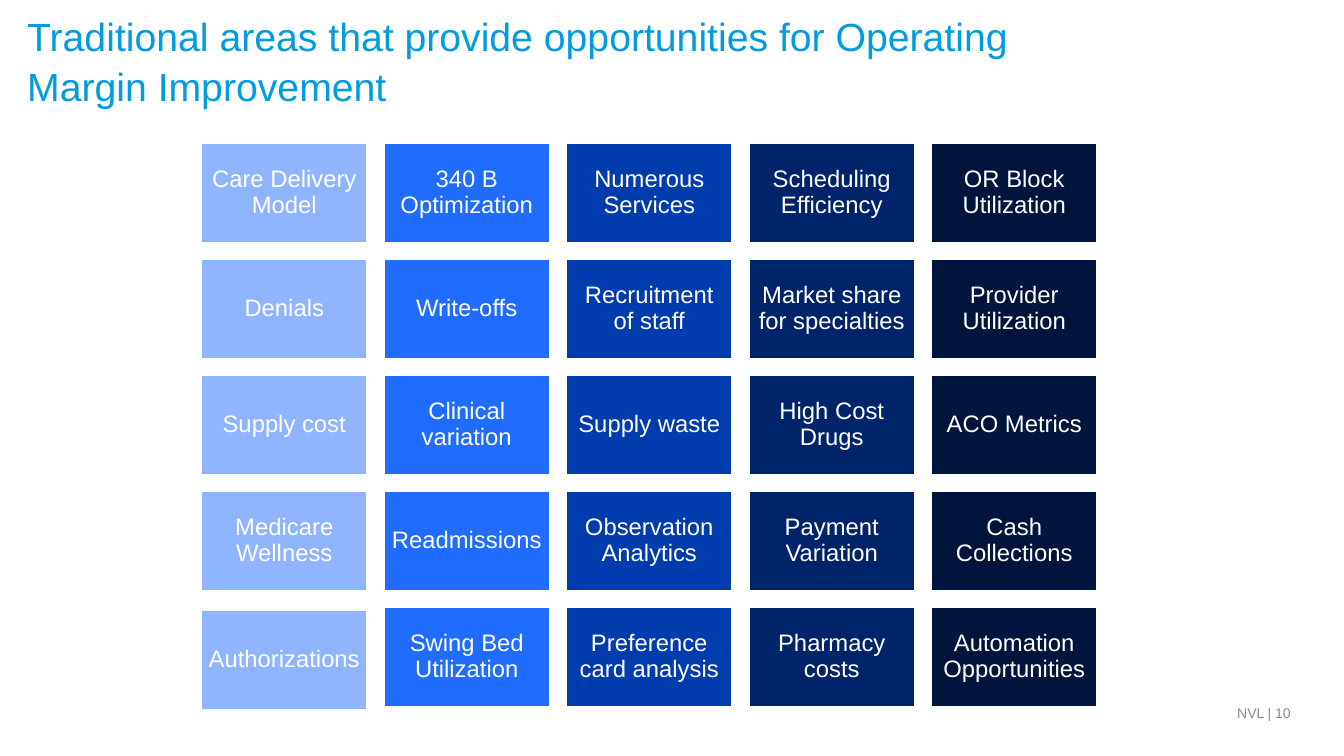
"""Build the slide on traditional areas for operating margin improvement."""
import dataclasses
import pptx
import pptx.dml.color
import pptx.enum.shapes
import pptx.enum.text
import pptx.util

Align = pptx.enum.text.PP_ALIGN
Anchor = pptx.enum.text.MSO_ANCHOR

EMU_PER_PX = 9144
FONT = "Arial"
WHITE = "FFFFFF"
GRID_LEFT, GRID_TOP = 200, 142
COLUMN_PITCH, ROW_PITCH = 181, 115
TILE_WIDTH, TILE_HEIGHT = 164, 99
AUTHORIZATIONS_DROP = 3

COLUMN_COLOURS = ["8FB5FF", "1F6CFF", "003CAD", "00246A", "00153D"]
AREAS = [
    ["Care Delivery Model", "340 B Optimization", "Numerous Services",
     "Scheduling Efficiency", "OR Block Utilization"],
    ["Denials", "Write-offs", "Recruitment of staff",
     "Market share for specialties", "Provider Utilization"],
    ["Supply cost", "Clinical variation", "Supply waste",
     "High Cost Drugs", "ACO Metrics"],
    ["Medicare Wellness", "Readmissions", "Observation Analytics",
     "Payment Variation", "Cash Collections"],
    ["Authorizations", "Swing Bed Utilization", "Preference card analysis",
     "Pharmacy costs", "Automation Opportunities"],
]


@dataclasses.dataclass(frozen=True)
class Tile:
    label: str
    left: int
    top: int
    colour: str


def px(length: int) -> pptx.util.Emu:
    return pptx.util.Emu(length * EMU_PER_PX)


def rgb(colour: str) -> pptx.dml.color.RGBColor:
    return pptx.dml.color.RGBColor.from_string(colour)


def write(shape, text: str, *, size: int, colour: str, align=Align.LEFT,
          anchor=Anchor.TOP, insets=(0, 0, 0, 0), line_spacing=1.0) -> None:
    frame = shape.text_frame
    frame.word_wrap = True
    frame.auto_size = pptx.enum.text.MSO_AUTO_SIZE.NONE
    frame.vertical_anchor = anchor
    (frame.margin_left, frame.margin_top,
     frame.margin_right, frame.margin_bottom) = map(px, insets)
    paragraph = frame.paragraphs[0]
    paragraph.alignment = align
    paragraph.line_spacing = line_spacing
    run = paragraph.add_run()
    run.text = text
    run.font.name = FONT
    run.font.size = pptx.util.Pt(size)
    run.font.color.rgb = rgb(colour)


def draw_tile(slide, tile: Tile) -> None:
    box = slide.shapes.add_shape(
        pptx.enum.shapes.MSO_SHAPE.RECTANGLE,
        px(tile.left), px(tile.top), px(TILE_WIDTH), px(TILE_HEIGHT))
    box.shadow.inherit = False
    box.fill.solid()
    box.fill.fore_color.rgb = rgb(tile.colour)
    box.line.color.rgb = rgb(WHITE)
    box.line.width = pptx.util.Pt(1)
    write(box, tile.label, size=17, colour=WHITE, align=Align.CENTER,
          anchor=Anchor.MIDDLE, insets=(6, 7, 6, 7), line_spacing=0.9)


def area_tiles() -> list[Tile]:
    return [
        Tile(label,
             GRID_LEFT + column * COLUMN_PITCH,
             GRID_TOP + row * ROW_PITCH
             + (AUTHORIZATIONS_DROP if label == "Authorizations" else 0),
             COLUMN_COLOURS[column])
        for row, labels in enumerate(AREAS)
        for column, label in enumerate(labels)
    ]


def main() -> None:
    deck = pptx.Presentation()
    deck.slide_width, deck.slide_height = px(1333), px(750)
    slide = deck.slides.add_slide(deck.slide_layouts.get_by_name("Title Only"))

    title = slide.shapes.title
    title.left, title.top, title.width, title.height = map(px, (25, 7, 1092, 96))
    write(title, "Traditional areas that provide opportunities for Operating "
          "Margin Improvement", size=28, colour="009CDE",
          insets=(2, 2, 0, 0), line_spacing=1.07)

    for tile in area_tiles():
        draw_tile(slide, tile)

    page_number = slide.shapes.add_textbox(px(1208), px(694), px(82), px(23))
    write(page_number, "NVL | 10", size=10, colour="888B8D", align=Align.RIGHT,
          insets=(10, 5, 10, 5))

    deck.save("out.pptx")


if __name__ == "__main__":
    main()
